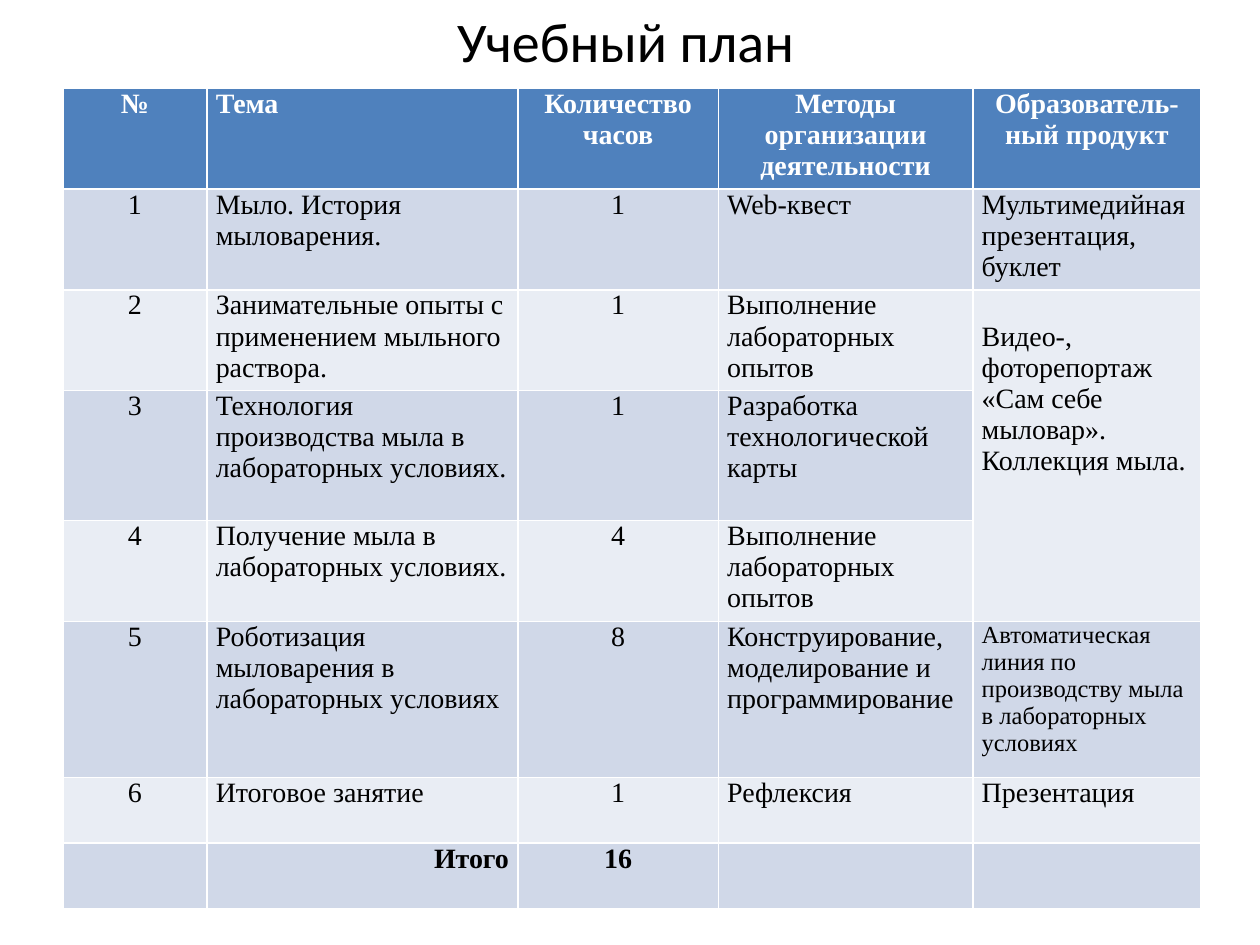
import pptx
import pptx.util
import pptx.dml.color
import pptx.enum.text

Cm, Pt = pptx.util.Cm, pptx.util.Pt
RGB = pptx.dml.color.RGBColor.from_string
ALIGN = pptx.enum.text.PP_ALIGN
MIDDLE = pptx.enum.text.MSO_ANCHOR.MIDDLE

TITLE = "Учебный план"
HEAD = ["№", "Тема", "Количество часов", "Методы организации деятельности",
        "Образователь-ный продукт"]
PLAN = [
    ["1", "Мыло. История мыловарения.", "1", "Web-квест",
     "Мультимедийная презентация, буклет"],
    ["2", "Занимательные опыты с применением мыльного раствора.", "1",
     "Выполнение лабораторных опытов",
     "Видео-, фоторепортаж\n«Сам себе мыловар».\nКоллекция мыла."],
    ["3", "Технология производства мыла в лабораторных условиях.", "1",
     "Разработка технологической карты", ""],
    ["4", "Получение мыла в лабораторных условиях.", "4",
     "Выполнение лабораторных опытов", ""],
    ["5", "Роботизация мыловарения в лабораторных условиях", "8",
     "Конструирование, моделирование и программирование",
     "Автоматическая линия по производству мыла в лабораторных условиях"],
    ["6", "Итоговое занятие", "1", "Рефлексия", "Презентация"],
]
TOTAL = ["", "Итого", "16", "", ""]
ROWS = [HEAD, *PLAN, TOTAL]
LAST = len(ROWS) - 1

WIDTHS = [2.9, 6.27, 4.04, 5.13, 4.6]
HEIGHTS = [2.01, 2.01, 2.01, 2.62, 2.01, 3.15, 1.32, 1.32]
MERGE = (2, 4), (4, 4)
SMALL = (5, 4)

THEME = {
    "title": {"name": "Calibri", "size": Pt(32), "color": "000000"},
    "head": {"name": "Times New Roman", "size": Pt(16), "bold": True, "color": "FFFFFF"},
    "body": {"name": "Times New Roman", "size": Pt(16), "bold": False, "color": "000000"},
    "fills": {"head": "4F81BD", "odd": "D0D8E8", "even": "E9EDF4"},
}
THEME["small"] = {**THEME["body"], "size": Pt(14)}
THEME["total"] = {**THEME["body"], "bold": True}
INSETS = {"margin_left": Cm(0.18), "margin_right": Cm(0.18),
          "margin_top": 0, "margin_bottom": 0}


def apply(item, values):
    for name, value in values.items():
        setattr(item, name, value)


def write(frame, text, style, align):
    frame.text = text
    font_style = {key: val for key, val in style.items() if key != "color"}
    for para in frame.paragraphs:
        para.alignment = align
        for run in para.runs:
            apply(run.font, font_style)
            run.font.color.rgb = RGB(style["color"])


def style_of(row, col):
    if (row, col) == SMALL:
        return THEME["small"]
    return THEME[{0: "head", LAST: "total"}.get(row, "body")]


def align_of(row, col):
    if (row, col) == (LAST, 1):
        return ALIGN.RIGHT
    centred = col in (0, 2) or (row == 0 and col != 1)
    return ALIGN.CENTER if centred else ALIGN.LEFT


def add_title(slide):
    frame = slide.shapes.add_textbox(Cm(1.19), 0, Cm(22.86), Cm(1.63)).text_frame
    apply(frame, {"word_wrap": True, "vertical_anchor": MIDDLE})
    write(frame, TITLE, THEME["title"], ALIGN.CENTER)


def add_plan(slide):
    table = slide.shapes.add_table(
        len(ROWS), len(WIDTHS), Cm(1.27), Cm(1.78),
        Cm(sum(WIDTHS)), Cm(sum(HEIGHTS))).table
    for column, width in zip(table.columns, WIDTHS):
        column.width = Cm(width)
    for line, height in zip(table.rows, HEIGHTS):
        line.height = Cm(height)

    for row, texts in enumerate(ROWS):
        band = "head" if row == 0 else "odd" if row % 2 else "even"
        for col, text in enumerate(texts):
            cell = table.cell(row, col)
            apply(cell, INSETS)
            cell.fill.solid()
            cell.fill.fore_color.rgb = RGB(THEME["fills"][band])
            if text:
                write(cell.text_frame, text, style_of(row, col), align_of(row, col))

    first, last = (table.cell(*place) for place in MERGE)
    first.merge(last)
    first.margin_top = Cm(0.63)


def main():
    deck = pptx.Presentation()
    apply(deck, {"slide_width": Cm(25.4), "slide_height": Cm(19.05)})
    slide = deck.slides.add_slide(deck.slide_layouts[6])
    add_title(slide)
    add_plan(slide)
    deck.save("out.pptx")


if __name__ == "__main__":
    main()
